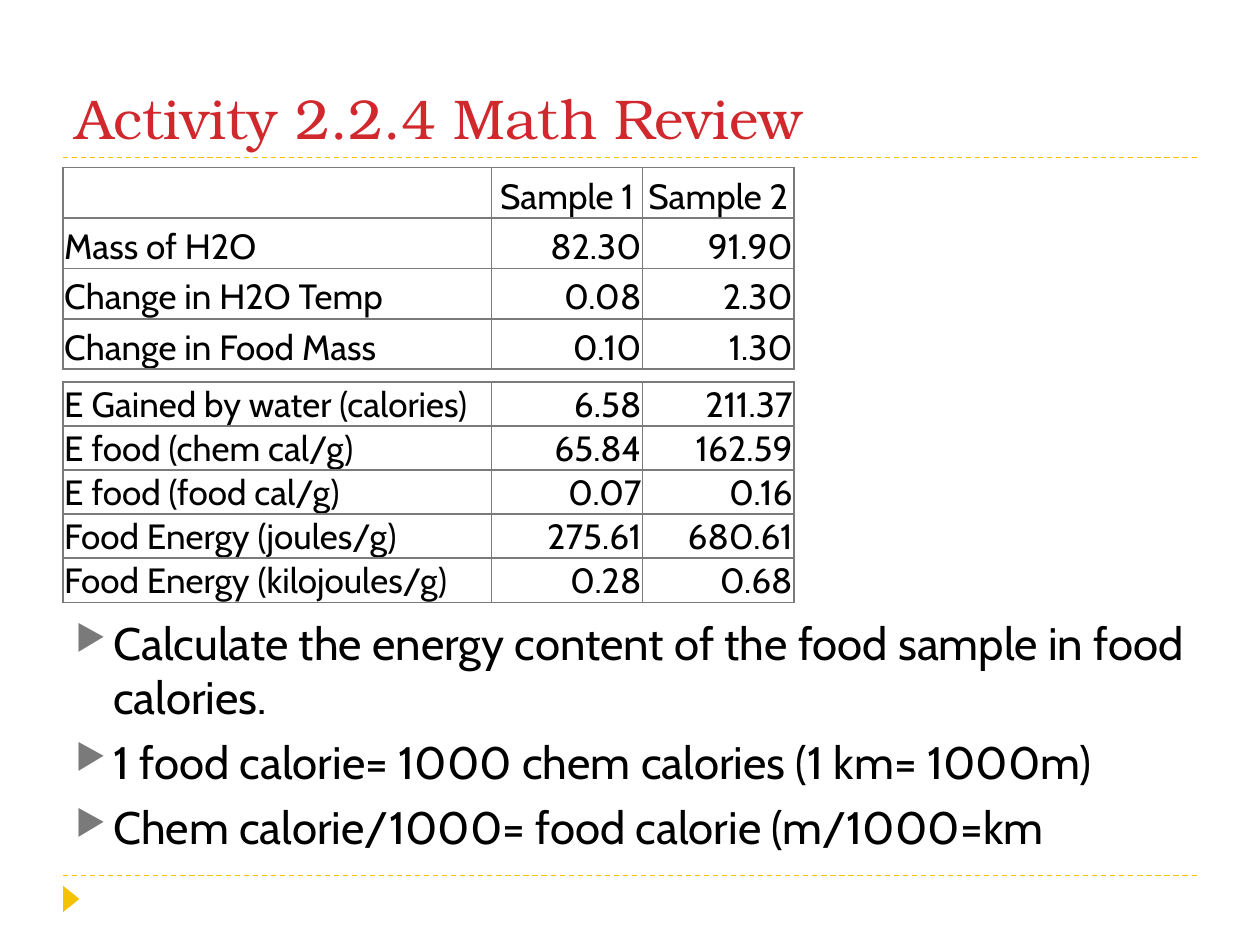
import pptx
import pptx.util
import pptx.oxml
import pptx.oxml.ns
from lxml import etree
from pptx.dml.color import RGBColor
from pptx.enum.dml import MSO_LINE
from pptx.enum.shapes import MSO_CONNECTOR, MSO_SHAPE
from pptx.enum.text import MSO_ANCHOR, PP_ALIGN
from pptx.util import Inches, Pt

COLORS = {"title": "D1282E", "text": "000000", "gray": "7A7A7A", "gold": "F5C201"}
TITLE_FONT, BODY_FONT = "TeX Gyre Bonum", "Cabin"
COLUMN_WIDTHS = (3.4, 1.2, 1.2)

MEASUREMENTS = [
    ("", "Sample 1", "Sample 2"),
    ("Mass of H2O", "82.30", "91.90"),
    ("Change in H2O Temp", "0.08", "2.30"),
    ("Change in Food Mass", "0.10", "1.30"),
]
ENERGY_RESULTS = [
    ("E Gained by water (calories)", "6.58", "211.37"),
    ("E food (chem cal/g)", "65.84", "162.59"),
    ("E food (food cal/g)", "0.07", "0.16"),
    ("Food Energy (joules/g)", "275.61", "680.61"),
    ("Food Energy (kilojoules/g)", "0.28", "0.68"),
]
INSTRUCTIONS = [
    "Calculate the energy content of the food sample in food calories.",
    "1 food calorie= 1000 chem calories (1 km= 1000m)",
    "Chem calorie/1000= food calorie (m/1000=km",
]


def color(name):
    return RGBColor.from_string(COLORS[name])


def add_run(paragraph, text, font, size, color_name="text"):
    run = paragraph.add_run()
    run.text = text
    run.font.name = font
    run.font.size = Pt(size)
    run.font.color.rgb = color(color_name)


def add_child(parent, tag, **attributes):
    return etree.SubElement(parent, pptx.oxml.ns.qn(tag), attributes)


def add_rule(slide, left, top, width):
    rule = slide.shapes.add_connector(
        MSO_CONNECTOR.STRAIGHT, Inches(left), Inches(top), Inches(left + width), Inches(top))
    rule.line.color.rgb = color("gold")
    rule.line.width = Pt(0.75)
    rule.line.dash_style = MSO_LINE.DASH
    add_child(rule._element.spPr, "a:effectLst")


def add_footer(slide, left, top, width):
    """Dashed rule with a right-pointing marker below its start."""
    add_rule(slide, left, top, width)
    marker = slide.shapes.add_shape(
        MSO_SHAPE.ISOSCELES_TRIANGLE,
        Inches(left - 0.04), Inches(top + 0.12), Inches(0.21), Inches(0.13))
    marker.rotation = 90
    marker.shadow.inherit = False
    marker.fill.solid()
    marker.fill.fore_color.rgb = color("gold")
    marker.line.fill.background()


def add_title(slide, left, top, width, height):
    title = slide.shapes.title
    title.left, title.top = Inches(left), Inches(top)
    title.width, title.height = Inches(width), Inches(height)
    title.text_frame.vertical_anchor = MSO_ANCHOR.BOTTOM
    heading = title.text_frame.paragraphs[0]
    heading.alignment = PP_ALIGN.LEFT
    add_run(heading, "Activity 2.2.4 Math Review", TITLE_FONT, 32, "title")
    add_rule(slide, left, top + height, width)


def format_cell(cell):
    cell.vertical_anchor = MSO_ANCHOR.BOTTOM
    cell.margin_left = cell.margin_right = cell.margin_top = Inches(0.01)
    cell.margin_bottom = 0
    properties = cell._tc.get_or_add_tcPr()
    for side in ("a:lnL", "a:lnR", "a:lnT", "a:lnB"):
        border = add_child(properties, side, w=str(Pt(1)))
        add_child(add_child(border, "a:solidFill"), "a:srgbClr", val=COLORS["gray"])
    cell.fill.background()


def add_sample_table(slide, left, top, row_height, rows, has_header=False):
    table = slide.shapes.add_table(
        len(rows), len(COLUMN_WIDTHS), Inches(left), Inches(top),
        Inches(sum(COLUMN_WIDTHS)), Inches(row_height * len(rows))).table
    table.first_row = table.horz_banding = False
    for column, width in zip(table.columns, COLUMN_WIDTHS):
        column.width = Inches(width)
    for row_index, values in enumerate(rows):
        table.rows[row_index].height = Inches(row_height)
        for column_index, value in enumerate(values):
            cell = table.cell(row_index, column_index)
            format_cell(cell)
            if not value:
                continue
            entry = cell.text_frame.paragraphs[0]
            if has_header and row_index == 0:
                entry.alignment = PP_ALIGN.CENTER
            else:
                entry.alignment = PP_ALIGN.RIGHT if column_index else PP_ALIGN.LEFT
            add_run(entry, value, BODY_FONT, 20)


def add_instructions(slide, left, top, width, height):
    frame = slide.shapes.add_textbox(
        Inches(left), Inches(top), Inches(width), Inches(height)).text_frame
    frame.word_wrap = True
    for index, instruction in enumerate(INSTRUCTIONS):
        bullet = frame.add_paragraph() if index else frame.paragraphs[0]
        if index:
            bullet.space_before = Pt(6)
        properties = bullet._p.get_or_add_pPr()
        properties.set("marL", str(Inches(0.3)))
        properties.set("indent", str(-Inches(0.3)))
        add_child(add_child(properties, "a:buClr"), "a:srgbClr", val=COLORS["gray"])
        add_child(properties, "a:buSzPct", val="76000")
        add_child(properties, "a:buChar", char="▶")
        add_run(bullet, instruction, BODY_FONT, 26)


def main():
    presentation = pptx.Presentation()
    presentation.slide_width, presentation.slide_height = Inches(10), Inches(7.5)
    slide = presentation.slides.add_slide(presentation.slide_layouts.get_by_name("Title Only"))
    add_title(slide, 0.5, 0.25, 9, 1)
    add_sample_table(slide, 0.5, 1.33, 0.4, MEASUREMENTS, has_header=True)
    add_sample_table(slide, 0.5, 3.03, 0.35, ENERGY_RESULTS)
    add_instructions(slide, 0.5, 4.83, 9.07, 1.98)
    add_footer(slide, 0.5, 6.95, 9)
    presentation.save("out.pptx")


if __name__ == "__main__":
    main()
